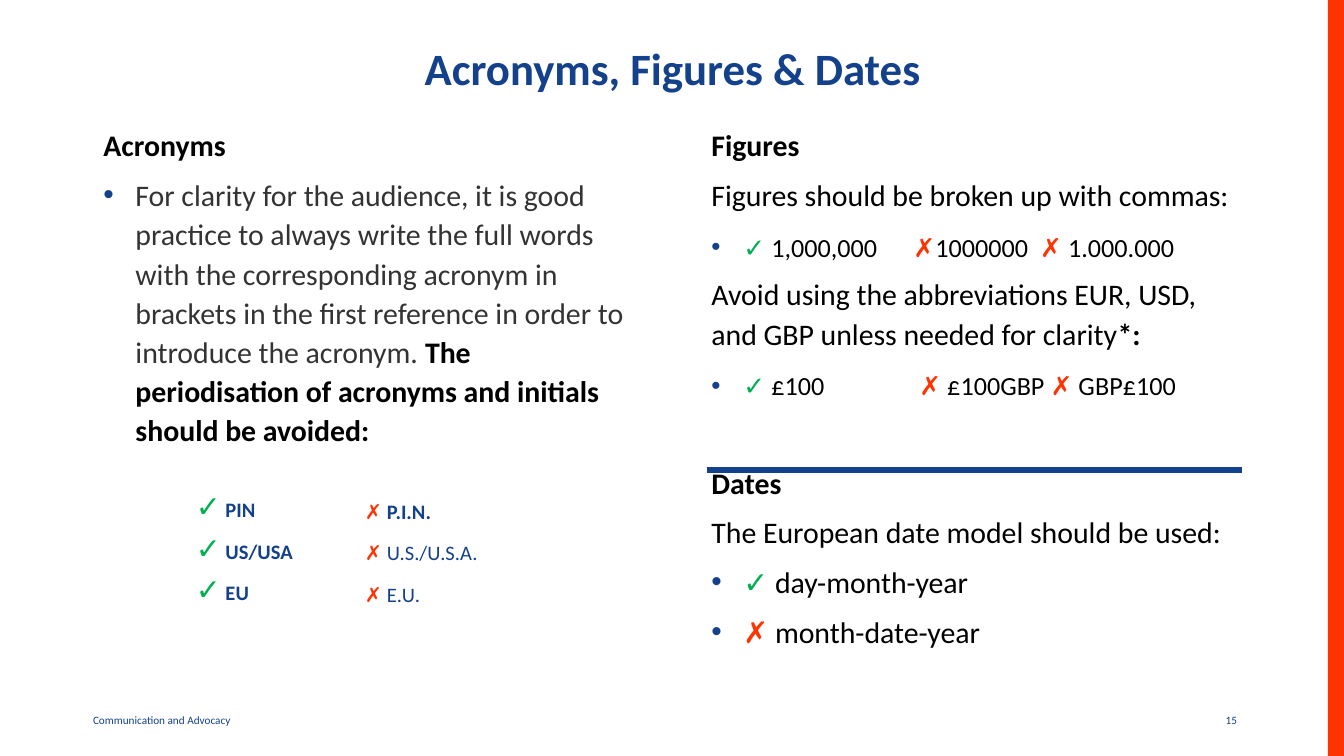
from pptx import Presentation
from pptx.dml.color import RGBColor
from pptx.enum.shapes import MSO_CONNECTOR as Conn, MSO_SHAPE as Shape
from pptx.enum.text import MSO_ANCHOR as Anchor, MSO_AUTO_SIZE as Fit, PP_ALIGN as Align
from pptx.oxml.ns import qn
from pptx.util import Emu, Pt
from lxml.etree import SubElement as Sub

SCALE = 914400 / 134.4
BLUE, RED, GREEN = "14418B", "FF3300", "00B050"
BLACK, GREY, WHITE = "000000", "333333", "FFFFFF"
YES, NO = "✓", "✗"


def px(n):
    return Emu(round(n * SCALE))


def tint(code):
    return RGBColor.from_string(code)


def place(item, box):
    item.left, item.top, item.width, item.height = map(px, box)


def write(para, text, size=16, color=BLACK, bold=False):
    run = para.add_run()
    run.text = text
    font = run.font
    font.name, font.size, font.bold = "Calibri", Pt(size), bold
    font.color.rgb = tint(color)


def indent(para, bullet):
    # Hanging bullet or plain text, with tab stops every 101 px
    props = para._p.get_or_add_pPr()
    hang = px(32) if bullet else 0
    props.set("marL", str(hang))
    props.set("indent", str(-hang))
    props.set("defTabSz", str(px(101)))
    if bullet:
        shade = Sub(props, qn("a:buClr"))
        Sub(shade, qn("a:srgbClr"), val=BLUE)
        Sub(props, qn("a:buFont"), typeface="Arial")
        Sub(props, qn("a:buChar"), char="•")
    else:
        Sub(props, qn("a:buNone"))


def fill_body(holder, box, rows):
    # Each row: bullet flag, space before in points, runs
    place(holder, box)
    frame = holder.text_frame
    frame.auto_size = Fit.NONE
    frame.word_wrap = True
    for i, (bullet, gap, runs) in enumerate(rows):
        para = frame.paragraphs[0] if i == 0 else frame.add_paragraph()
        para.line_spacing, para.space_before = Pt(21), Pt(gap)
        indent(para, bullet)
        for text, style in runs:
            write(para, text, **style)


def head(text, gap=5.6):
    return False, gap, [(text, {"bold": True})]


def plain(*runs):
    return False, 5.6, runs


def point(*runs):
    return True, 5.6, runs


def mark(text, size=16, bold=False):
    return text, {"size": size, "color": GREEN if YES in text else RED, "bold": bold}


def add_title(slide, box):
    title = slide.shapes.title
    place(title, box)
    frame = title.text_frame
    frame.vertical_anchor = Anchor.MIDDLE
    frame.auto_size = Fit.NONE
    para = frame.paragraphs[0]
    para.alignment, para.line_spacing = Align.CENTER, 0.8
    write(para, "Acronyms, Figures & Dates", size=24, color=BLUE, bold=True)


def add_left(slide, box):
    fill_body(slide.placeholders[1], box, [
        head("Acronyms"),
        point(("For clarity for the audience, it is good practice to always write "
               "the full words with the corresponding acronym in brackets in the "
               "first reference in order to introduce the acronym. ", {"color": GREY}),
              ("The periodisation of acronyms and initials should be avoided:",
               {"bold": True})),
    ])
    add_pairs(slide, (box[0] + 106, box[1] + 367, 399, 113))


def add_pairs(slide, box):
    # Right and wrong forms of each acronym
    pairs = [("PIN", "P.I.N."), ("US/USA", "U.S./U.S.A."), ("EU", "E.U.")]
    table = slide.shapes.add_table(len(pairs), 2, *map(px, box)).table
    table.first_row = table.horz_banding = False
    table.columns[0].width, table.columns[1].width = px(169), px(box[2] - 169)
    for r, (good, bad) in enumerate(pairs):
        cells = [
            [mark(YES, bold=True), (" " + good, {"size": 11, "color": BLUE, "bold": True})],
            [mark(NO + " ", 11, True), (bad, {"size": 11, "color": BLUE, "bold": r == 0})],
        ]
        for c, runs in enumerate(cells):
            cell = table.cell(r, c)
            cell.fill.solid()
            cell.fill.fore_color.rgb = tint(WHITE)
            cell.vertical_anchor = Anchor.BOTTOM
            cell.margin_left = cell.margin_right = 0
            cell.margin_top = cell.margin_bottom = 0
            para = cell.text_frame.paragraphs[0]
            para.alignment, para.line_spacing = Align.JUSTIFY, 1.15
            for text, style in runs:
                write(para, text, **style)


def add_right(slide, box):
    small = {"size": 14}
    fill_body(slide.placeholders[2], box, [
        head("Figures"),
        plain(("Figures should be broken up with commas:", {})),
        point(mark(YES, 14, True), (" 1,000,000\t", small), mark(NO, 14),
              ("1000000 ", small), mark(" " + NO + " ", 14), ("1.000.000", small)),
        plain(("Avoid using the abbreviations EUR, USD, and GBP unless needed "
               "for clarity", {}), ("*:", {"bold": True})),
        point(mark(YES + " ", 14, True), ("£100\t", small), mark(" " + NO, 14),
              (" £100GBP ", small), mark(NO, 14), (" GBP£100", small)),
        head("Dates", gap=32.2),
        plain(("The European date model should be used:", {})),
        point(mark(YES, bold=True), (" day-month-year", {})),
        point(mark(NO), (" month-date-year", {})),
    ])
    # Rule between figures and dates
    x, y = box[0] + 9, box[1] + 353
    rule = slide.shapes.add_connector(Conn.STRAIGHT, px(x), px(y), px(x + 535), px(y))
    rule.line.color.rgb = tint(BLUE)
    rule.line.width = Pt(3)
    Sub(rule._element.spPr, qn("a:effectLst"))


def add_note(slide, box, text, align, inset):
    note = slide.shapes.add_textbox(*map(px, box))
    frame = note.text_frame
    frame.word_wrap = True
    frame.vertical_anchor = Anchor.MIDDLE
    frame.margin_left = frame.margin_right = px(inset)
    para = frame.paragraphs[0]
    para.alignment = align
    write(para, text, size=6, color=BLUE)


def add_frame(slide, wide, high):
    # Footer, page number and edge bar
    add_note(slide, (948, 700, 302, 41), "15", Align.RIGHT, 13)
    add_note(slide, (93, 700, 302, 41), "Communication and Advocacy", Align.LEFT, 0)
    bar = slide.shapes.add_shape(Shape.RECTANGLE, *map(px, (wide - 16, 0, 16, high)))
    bar.shadow.inherit = False
    bar.fill.solid()
    bar.fill.fore_color.rgb = tint(RED)
    bar.line.fill.background()


def main():
    wide, high = 1344, 756
    deck = Presentation()
    deck.slide_width, deck.slide_height = px(wide), px(high)
    slide = deck.slides.add_slide(deck.slide_layouts[3])
    add_frame(slide, wide, high)
    add_title(slide, (93, 0, 1159, 146))
    add_left(slide, (90, 117, 553, 350))
    add_right(slide, (698, 117, 553, 582))
    deck.save("out.pptx")


if __name__ == "__main__":
    main()
